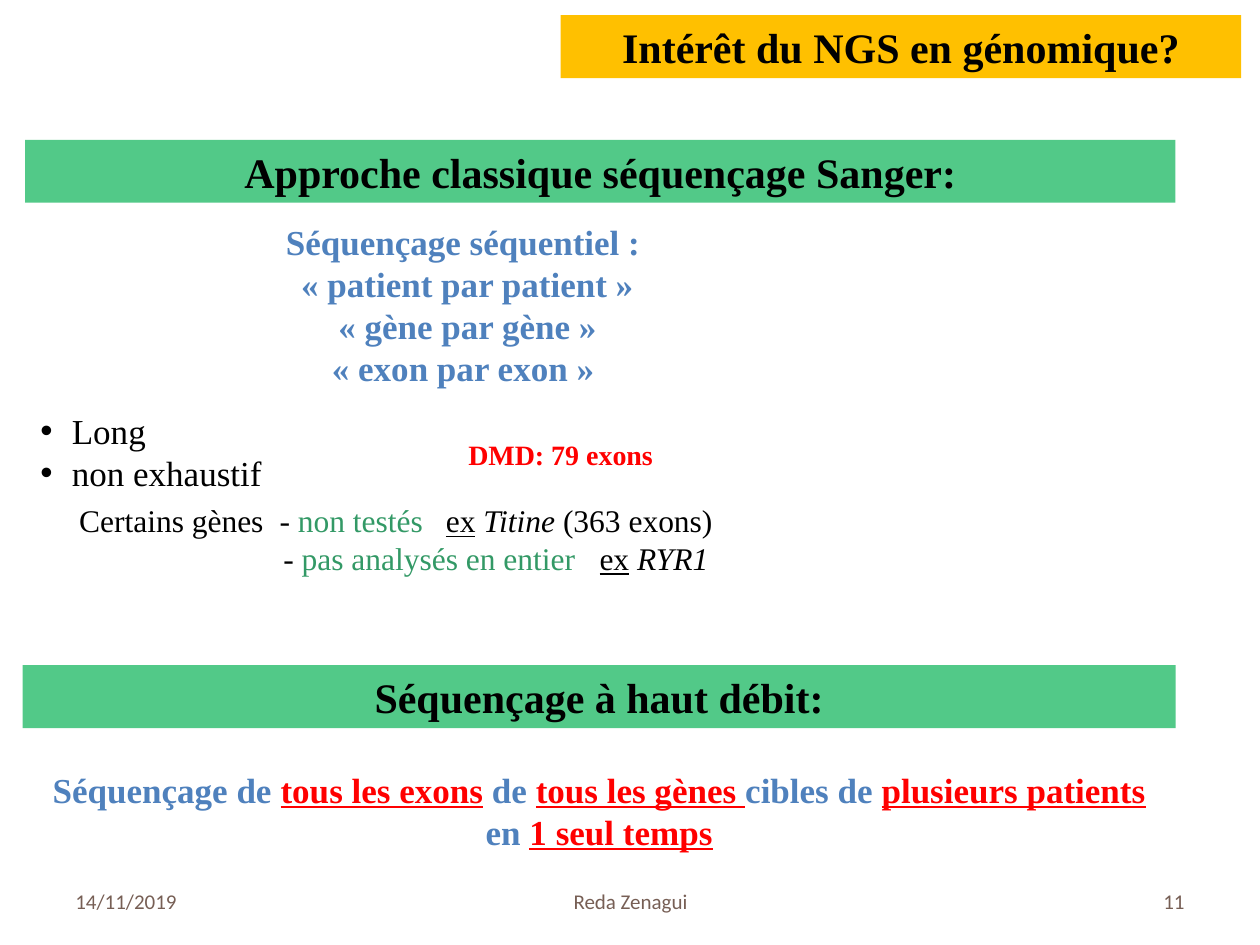
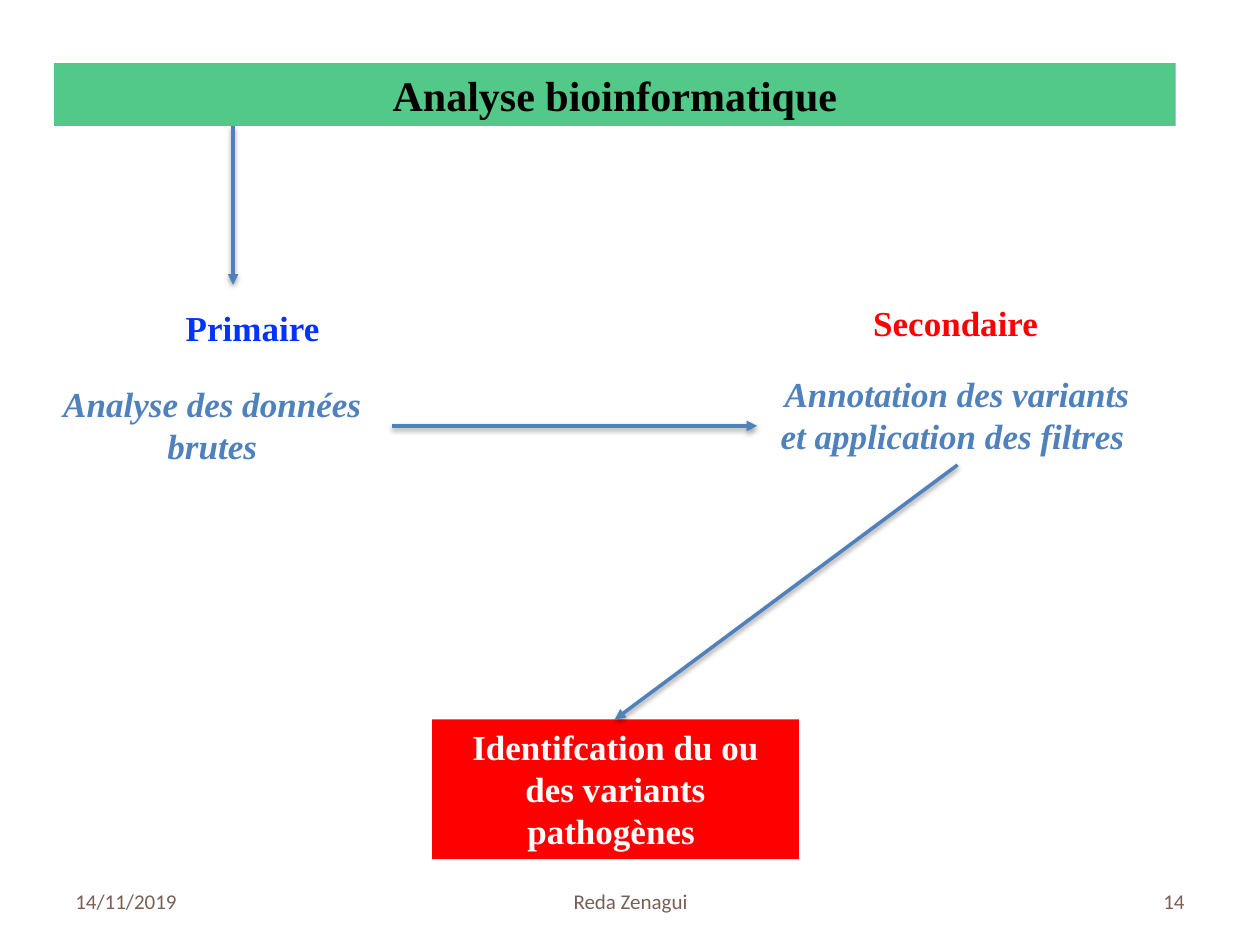
from lxml.etree import SubElement
from pptx import Presentation
from pptx.dml.color import RGBColor
from pptx.enum.shapes import MSO_CONNECTOR, MSO_SHAPE
from pptx.enum.text import MSO_ANCHOR, MSO_AUTO_SIZE, PP_ALIGN
from pptx.oxml.ns import qn
from pptx.util import Emu, Pt

PX = 9144  # 100 px to the inch
LEFT, CENTER, RIGHT = PP_ALIGN.LEFT, PP_ALIGN.CENTER, PP_ALIGN.RIGHT
BLACK, WHITE, RED = "000000", "FFFFFF", "FF0000"
GREEN, TEXT_GREEN, YELLOW = "00B050", "339966", "FFC000"
BLUE, BRIGHT_BLUE, BROWN = "4F81BD", "0432FF", "775F55"


def px(length):
    return Emu(length * PX)


def rgb(value):
    return RGBColor.from_string(value)


class Deck:
    """Holds the style and the current slide."""

    serif, sans = "Times New Roman", "Calibri"

    def __init__(self):
        self.show = Presentation()
        self.show.slide_width, self.show.slide_height = px(1000), px(750)
        self.page = None

    def new_page(self, layout, number):
        self.page = self.show.slides.add_slide(self.show.slide_layouts[layout])
        footers = ((50, 233, "14/11/2019", LEFT),
                   (342, 317, "Reda Zenagui", CENTER),
                   (717, 233, number, RIGHT))
        for left, width, words, align in footers:
            self.text((left, 695, width, 40), [[words]], 12, BROWN, align=align,
                      font=self.sans, anchor=MSO_ANCHOR.MIDDLE)

    def place(self, shape, at):
        shape.left, shape.top, shape.width, shape.height = map(px, at)

    def paint(self, shape, color, alpha=100):
        shape.fill.solid()
        shape.fill.fore_color.rgb = rgb(color)
        if alpha < 100:
            tint = shape._element.spPr.find(qn("a:solidFill")).find(qn("a:srgbClr"))
            SubElement(tint, qn("a:alpha"), val=str(alpha * 1000))

    def fill_text(self, shape, paras, size, color, bold=False, italic=False,
                  align=CENTER, font=serif, anchor=MSO_ANCHOR.TOP,
                  spacing=None, hanging=None, tabs=()):
        """Each para is a list of spans: a string, or (string, changes)."""
        frame = shape.text_frame
        frame.word_wrap = True
        frame.auto_size = MSO_AUTO_SIZE.NONE
        frame.vertical_anchor = anchor
        for index, spans in enumerate(paras):
            para = frame.paragraphs[0] if index == 0 else frame.add_paragraph()
            para.alignment = align
            para.space_before = Pt(0)
            if spacing:
                para.line_spacing = spacing
            properties = para._p.get_or_add_pPr()
            if hanging:
                properties.set("marL", str(px(hanging[0])))
                properties.set("indent", str(px(-hanging[1])))
            if tabs:
                stops = SubElement(properties, qn("a:tabLst"))
                for stop in tabs[index]:
                    SubElement(stops, qn("a:tab"), pos=str(px(stop)), algn="l")
            for item in spans:
                words, changes = (item, {}) if isinstance(item, str) else item
                span = para.add_run()
                span.text = words
                span.font.name = font
                span.font.size = Pt(size)
                span.font.bold = bold
                span.font.italic = changes.get("italic", italic)
                span.font.underline = changes.get("underline", False)
                span.font.color.rgb = rgb(changes.get("color", color))

    def text(self, at, paras, size, color, **style):
        box = self.page.shapes.add_textbox(*map(px, at))
        self.fill_text(box, paras, size, color, **style)

    def panel(self, at, words, size, color, fill, alpha=100, **style):
        box = self.page.shapes.add_shape(MSO_SHAPE.RECTANGLE, *map(px, at))
        box.shadow.inherit = False
        box.line.fill.background()
        self.paint(box, fill, alpha)
        self.fill_text(box, [[words]], size, color, bold=True, **style)

    def band(self, at, words):
        self.panel(at, words, 24, BLACK, GREEN, 68)

    def title(self, at, words, fill, alpha=100):
        title = self.page.shapes.title
        self.place(title, at)
        self.paint(title, fill, alpha)
        self.fill_text(title, [[words]], 24, BLACK, bold=True)

    def bullets(self, at, items, size):
        body = self.page.placeholders[1]
        self.place(body, at)
        self.fill_text(body, [[item] for item in items], size, BLACK,
                       align=LEFT, hanging=(27, 25))

    def arrow(self, start, end):
        line = self.page.shapes.add_connector(
            MSO_CONNECTOR.STRAIGHT, *map(px, start + end))
        line.line.color.rgb = rgb(BLUE)
        line.line.width = Pt(2)
        properties = line._element.spPr
        SubElement(properties.find(qn("a:ln")), qn("a:tailEnd"), type="triangle")
        # Soft shadow straight below the line
        effects = SubElement(properties, qn("a:effectLst"))
        shadow = SubElement(effects, qn("a:outerShdw"), blurRad=str(Pt(3.1)),
                            dist=str(Pt(1.6)), dir="5400000", rotWithShape="0")
        shade = SubElement(shadow, qn("a:srgbClr"), val=BLACK)
        SubElement(shade, qn("a:alpha"), val="38000")


def sequencing_page(deck):
    deck.new_page(1, "11")
    deck.title((445, 12, 540, 50), "Intérêt du NGS en génomique?", YELLOW)

    # Classic approach
    deck.band((20, 111, 913, 50), "Approche classique séquençage Sanger:")
    deck.text((5, 170, 732, 145),
              [["Séquençage séquentiel : "], ["« patient par patient »"],
               ["« gène par gène »"], ["« exon par exon » "]],
              20, BLUE, bold=True)
    deck.bullets((20, 320, 228, 77), ["Long", "non exhaustif"], 20)

    # Genes left out, in columns set by tabs
    green, under, slanted = ({"color": TEXT_GREEN}, {"underline": True},
                             {"italic": True})
    deck.text((53, 393, 589, 71),
              [["Certains gènes\t- ", ("non testés", green), "\t", ("ex", under),
                " ", ("Titine ", slanted), "(363 exons)"],
               ["\t- ", ("pas analysés en entier", green), "\t", ("ex", under),
                " ", ("RYR1", slanted)]],
              18, BLACK, align=LEFT, tabs=((159, 291), (162, 413)))
    deck.panel((315, 329, 260, 46), "DMD: 79 exons", 16, RED, WHITE, 62,
               spacing=1.5)

    # High throughput
    deck.band((18, 528, 915, 50), "Séquençage à haut débit:")
    key = {"color": RED, "underline": True}
    deck.text((18, 605, 915, 77),
              [["Séquençage de ", ("tous les exons", key), " de ",
                ("tous les gènes ", key), "cibles de ",
                ("plusieurs patients ", key), "en ", ("1 seul temps", key)]],
              20, BLUE, bold=True)


def analysis_page(deck):
    deck.new_page(5, "14")
    deck.title((43, 50, 890, 50), "Analyse bioinformatique", GREEN, 68)

    # Two steps
    steps = (((114, 238, 173, 44), "Primaire", BRIGHT_BLUE,
              (23, 299, 291, 77), "Analyse des données brutes"),
             ((672, 234, 173, 44), "Secondaire", RED, (602, 291, 315, 77),
              "Annotation des variants et application des filtres "))
    for name_at, name, color, task_at, task in steps:
        deck.text(name_at, [[name]], 20, color, bold=True)
        deck.text(task_at, [[task]], 20, BLUE, bold=True, italic=True)

    # Outcome and flow
    deck.panel((343, 571, 291, 111),
               "Identifcation du ou des variants pathogènes ", 20, WHITE, RED)
    deck.arrow((185, 100), (185, 226))
    deck.arrow((311, 338), (601, 338))
    deck.arrow((760, 369), (488, 571))


def main():
    deck = Deck()
    sequencing_page(deck)
    analysis_page(deck)
    deck.show.save("out.pptx")


if __name__ == "__main__":
    main()
